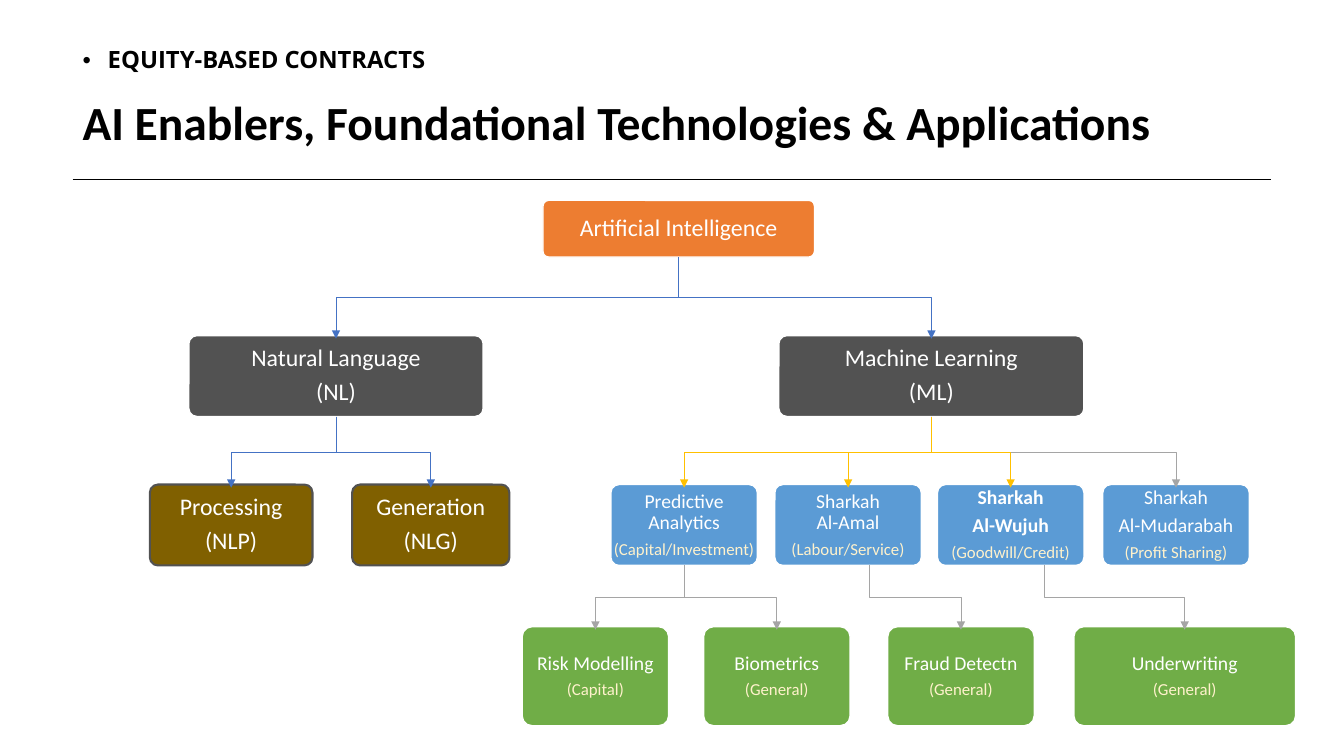
from collections import namedtuple
from lxml import etree
from pptx import Presentation
from pptx.dml.color import RGBColor
from pptx.enum.shapes import MSO_CONNECTOR, MSO_SHAPE
from pptx.enum.text import MSO_ANCHOR, PP_ALIGN
from pptx.oxml.ns import qn
from pptx.util import Inches, Pt

ELBOW, STRAIGHT = MSO_CONNECTOR.ELBOW, MSO_CONNECTOR.STRAIGHT
ROUNDED = MSO_SHAPE.ROUNDED_RECTANGLE
MIDDLE, CENTER = MSO_ANCHOR.MIDDLE, PP_ALIGN.CENTER

WHITE = RGBColor(0xFF, 0xFF, 0xFF)
BLACK = RGBColor(0, 0, 0)
CREAM = RGBColor(0xFF, 0xF2, 0xCC)
ORANGE = RGBColor(0xED, 0x7D, 0x31)
CHARCOAL = RGBColor(0x52, 0x52, 0x52)
BROWN = RGBColor(0x80, 0x60, 0x00)
SKY = RGBColor(0x5B, 0x9B, 0xD5)
GREEN = RGBColor(0x70, 0xAD, 0x47)
BLUE = RGBColor(0x44, 0x72, 0xC4)
GOLD = RGBColor(0xFF, 0xC0, 0x00)
GREY = RGBColor(0xA5, 0xA5, 0xA5)

W, H = Inches(13.33), Inches(7.5)
OVERLAP = Inches(0.03)
NOTE_SIZE = 12

Level = namedtuple("Level", "top height fill border border_width size note")
ROOT = Level(26.5, 7.5, ORANGE, WHITE, 1, 17, WHITE)
BRANCH = Level(44.4, 10.7, CHARCOAL, WHITE, 1, 17, WHITE)
LANGUAGE = Level(64.1, 10.7, BROWN, CHARCOAL, 1.5, 17, WHITE)
CONTRACT = Level(64.1, 10.7, SKY, WHITE, 1, 14, CREAM)
APPLICATION = Level(82.9, 13.1, GREEN, WHITE, 1, 14, CREAM)

Node = namedtuple("Node", "text level center width parent color shift bold",
                  defaults=(None, None, 0, False))
NODES = {
    "ai": Node("Artificial Intelligence", ROOT, 50.5, 20.2),
    "ml": Node("Machine Learning\n(ML)", BRANCH, 69.3, 22.7, "ai", BLUE),
    "nl": Node("Natural Language\n(NL)", BRANCH, 25, 21.9, "ai", BLUE),
    "nlp": Node("Processing\n(NLP)", LANGUAGE, 17.2, 12.1, "nl", BLUE),
    "nlg": Node("Generation\n(NLG)", LANGUAGE, 32.05, 11.7, "nl", BLUE),
    "mudarabah": Node("Sharkah\nAl-Mudarabah\n(Profit Sharing)", CONTRACT, 87.5, 10.9, "ml", GREY),
    "wujuh": Node("Sharkah\nAl-Wujuh\n(Goodwill/Credit)", CONTRACT, 75.2, 10.9, "ml", GOLD, bold=True),
    "amal": Node("Sharkah\vAl-Amal\n(Labour/Service)", CONTRACT, 63.1, 10.9, "ml", GOLD),
    "predictive": Node("Predictive\vAnalytics\n(Capital/Investment)", CONTRACT, 50.9, 10.9, "ml", GOLD),
    "biometrics": Node("Biometrics\n(General)", APPLICATION, 57.8, 10.9, "predictive", GREY),
    "risk": Node("Risk Modelling\n(Capital)", APPLICATION, 44.3, 10.9, "predictive", GREY),
    "fraud": Node("Fraud Detectn\n(General)", APPLICATION, 71.5, 10.9, "amal", GREY, 1.6),
    "underwriting": Node("Underwriting\n(General)", APPLICATION, 88.15, 16.5, "wujuh", GREY, 2.5),
}


def style_run(r, font, size, color, bold):
    r.font.name = font
    r.font.size = Pt(size)
    r.font.color.rgb = color
    r.font.bold = bold


def style_line(c, color, width):
    c.line.color.rgb = color
    c.line.width = Pt(width)
    etree.SubElement(c._element.spPr, qn("a:effectLst"))


def add_heading(s, text, box, font, size):
    tb = s.shapes.add_textbox(*box)
    tf = tb.text_frame
    tf.word_wrap = True
    tf.text = text
    p = tf.paragraphs[0]
    p.line_spacing = 0.9
    style_run(p.runs[0], font, size, BLACK, True)
    return tf


def add_header(s, x, y, w, h):
    tf = add_heading(s, "EQUITY-BASED CONTRACTS",
                     (x, y, int(w * 0.85), int(h * 0.22)), "Open Sans", 17)
    tf.margin_top = 0
    pPr = tf.paragraphs[0]._p.get_or_add_pPr()
    pPr.set("marL", str(Inches(0.25)))
    pPr.set("indent", str(-Inches(0.25)))
    etree.SubElement(pPr, qn("a:buFont")).set("typeface", "Arial")
    etree.SubElement(pPr, qn("a:buChar")).set("char", "•")

    tf = add_heading(s, "AI Enablers, Foundational Technologies & Applications",
                     (x, y + int(h * 0.39), int(w * 0.92), int(h * 0.39)), "Calibri", 34)
    tf.vertical_anchor = MIDDLE
    rule = s.shapes.add_connector(STRAIGHT, x, y + h, x + w, y + h)
    style_line(rule, BLACK, 0.7)


def add_node(s, node, x, y, w, h):
    level = node.level
    sp = s.shapes.add_shape(ROUNDED, x + int(w * (node.center - node.width / 2) / 100),
                            y + int(h * level.top / 100),
                            int(w * node.width / 100), int(h * level.height / 100))
    sp.adjustments[0] = 0.1
    sp.shadow.inherit = False
    sp.fill.solid()
    sp.fill.fore_color.rgb = level.fill
    sp.line.color.rgb = level.border
    sp.line.width = Pt(level.border_width)
    tf = sp.text_frame
    tf.word_wrap = False
    tf.vertical_anchor = MIDDLE
    tf.margin_left = tf.margin_right = tf.margin_top = tf.margin_bottom = Inches(0.01)
    tf.text = node.text
    for p in tf.paragraphs:
        is_note = p.text.startswith("(") and level.note == CREAM
        size = NOTE_SIZE if is_note else level.size
        p.alignment = CENTER
        p.line_spacing = 0.9
        p.space_after = Pt(size * 0.35)
        for r in p.runs:
            style_run(r, "Calibri", size, level.note if is_note else WHITE,
                      node.bold and not is_note)
    return sp


def add_branch(s, parent, child, shift, color):
    x1, y1 = parent.left + parent.width // 2 + shift, parent.top + parent.height
    x2, y2 = child.left + child.width // 2, child.top + OVERLAP
    cx, cy = (x1 + x2) // 2, (y1 + y2) // 2
    half_drop, half_run = (y2 - y1) // 2, abs(x2 - x1) // 2
    side = 1 if x2 > x1 else -1
    c = s.shapes.add_connector(ELBOW, cx + side * half_drop, cy - half_run,
                               cx - side * half_drop, cy + half_run)
    angle = 270 if side > 0 else 90
    c._element.spPr.find(qn("a:xfrm")).set("rot", str(angle * 60000))
    style_line(c, color, 0.5)
    etree.SubElement(c.line._get_or_add_ln(), qn("a:tailEnd")).set("type", "triangle")


def add_tree(s, x, y, w, h):
    placed = {}
    for name, node in NODES.items():
        placed[name] = add_node(s, node, x, y, w, h)
        if node.parent:
            add_branch(s, placed[node.parent], placed[name],
                       int(w * node.shift / 100), node.color)


def main():
    prs = Presentation()
    prs.slide_width, prs.slide_height = W, H
    s = prs.slides.add_slide(prs.slide_layouts[6])
    add_header(s, Inches(0.72), Inches(0.48), Inches(11.89), Inches(1.3))
    add_tree(s, 0, 0, W, H)
    prs.save("out.pptx")


if __name__ == "__main__":
    main()
